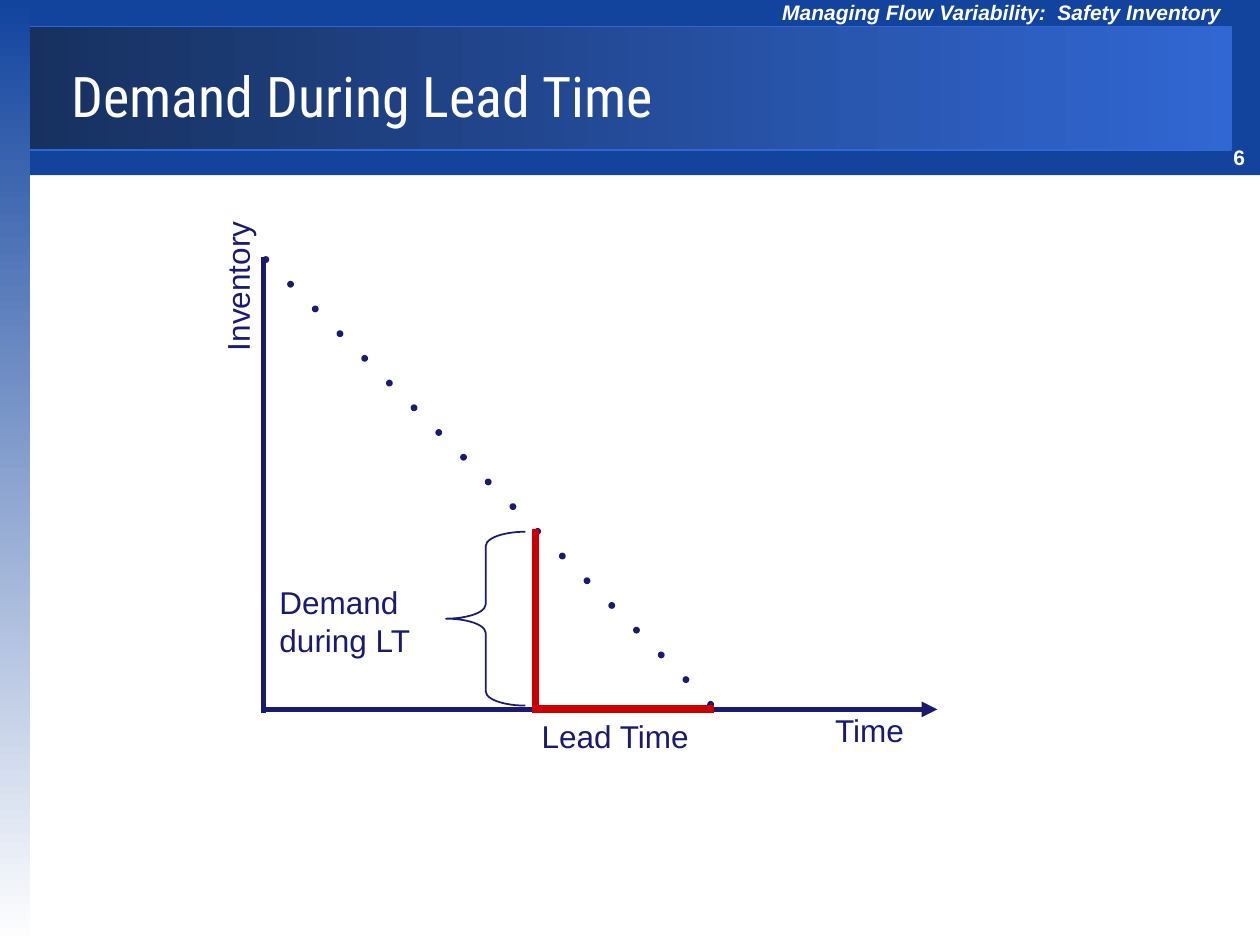
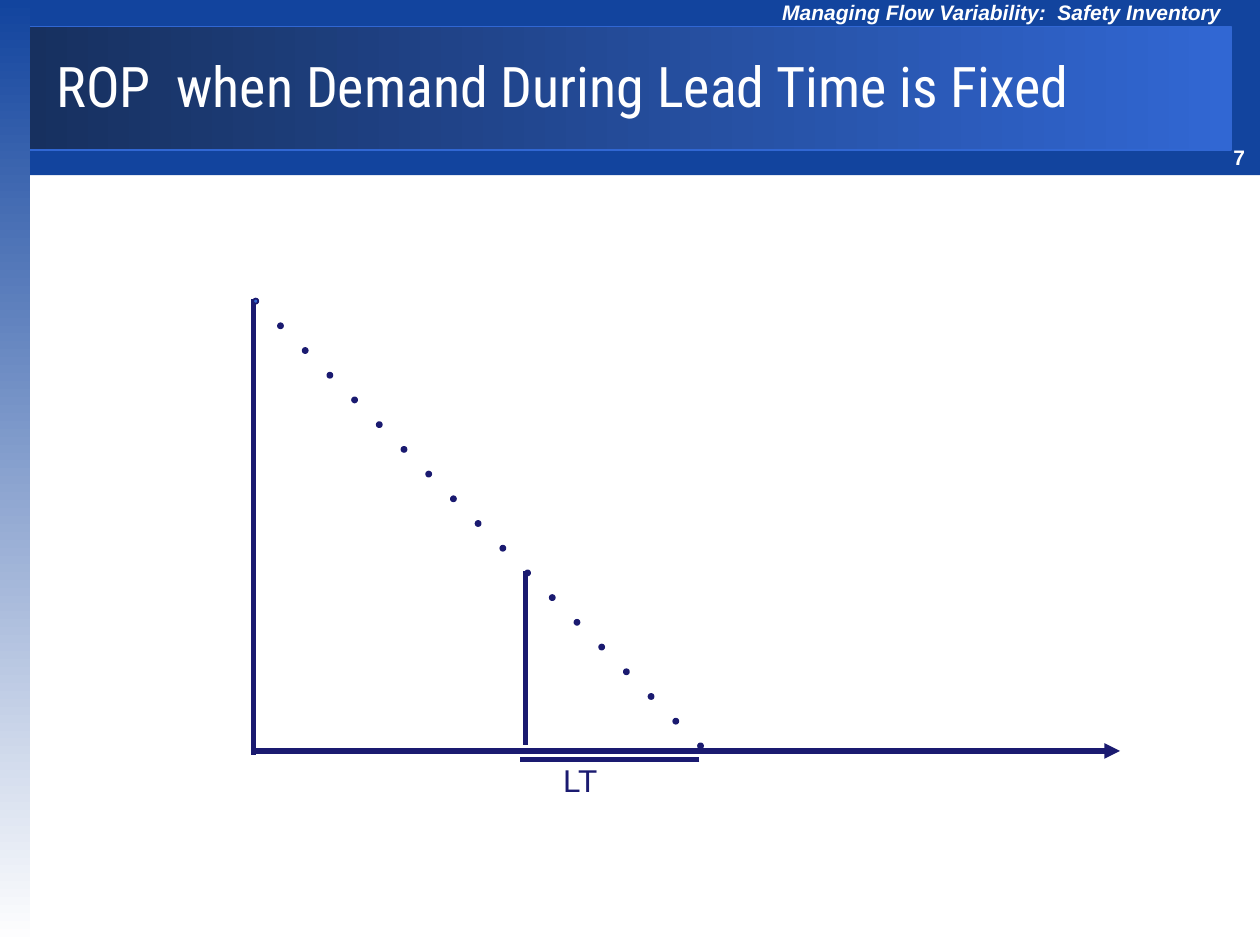
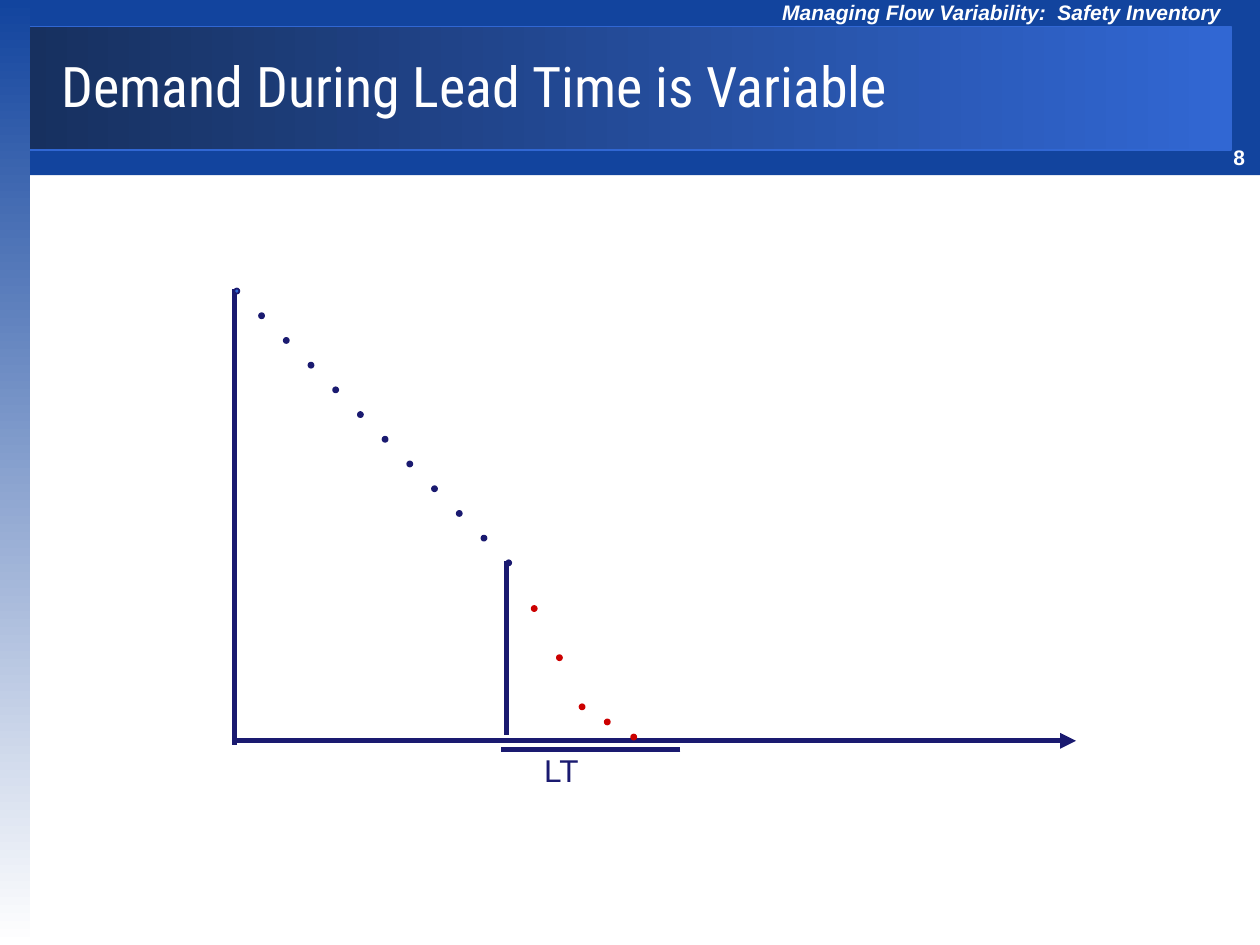
from pptx import Presentation
from pptx.dml.color import RGBColor
from pptx.enum.shapes import MSO_CONNECTOR as Link, MSO_SHAPE as Kind
from pptx.oxml.ns import qn
from pptx.util import Inches, Pt
from lxml.etree import SubElement

NAVY = RGBColor(0x1A, 0x1A, 0x70)
BLUE = RGBColor(0x12, 0x44, 0x9E)
DARK = RGBColor(0x17, 0x30, 0x5F)
SKY = RGBColor(0x31, 0x67, 0xD3)
RED = RGBColor(0xCC, 0x00, 0x00)
WHITE = RGBColor(0xFF, 0xFF, 0xFF)

SIZE = 0.04
COUNT = 19
STEP = 3.53 / (COUNT - 1)
DROP = 3.62
BASE = 3.59
ORDER = 2.16
END = 3.58


def shape(shapes, kind, left, top, width, height, fill=None, line=None, weight=1):
    """Add a preset shape with a plain fill and line."""
    item = shapes.add_shape(kind, Inches(left), Inches(top), Inches(width), Inches(height))
    item.shadow.inherit = False
    if fill is None:
        item.fill.background()
    else:
        item.fill.solid()
        item.fill.fore_color.rgb = fill
    if line is None:
        item.line.fill.background()
    else:
        item.line.color.rgb = line
        item.line.width = Pt(weight)
    return item


def blend(item, start, end, angle):
    """Fill a shape with a gradient of two colours."""
    item.fill.gradient()
    item.fill.gradient_angle = angle
    for stop, color in zip(item.fill.gradient_stops, (start, end)):
        stop.color.rgb = color


def text(shapes, words, left, top, width, height, size=18, color=NAVY,
         face="Arial", bold=False, slant=False, wrap=False):
    """Add a text box of one paragraph."""
    box = shapes.add_textbox(Inches(left), Inches(top), Inches(width), Inches(height))
    box.text_frame.word_wrap = wrap
    para = box.text_frame.paragraphs[0]
    para.text = words
    font = para.font
    font.name, font.size, font.bold, font.italic = face, Pt(size), bold, slant
    font.color.rgb = color
    return box


def line(shapes, x1, y1, x2, y2, color=NAVY, weight=3, arrow=False):
    """Draw a straight line, with an arrowhead at its end if asked."""
    item = shapes.add_connector(Link.STRAIGHT, Inches(x1), Inches(y1), Inches(x2), Inches(y2))
    item.line.color.rgb = color
    item.line.width = Pt(weight)
    if arrow:
        SubElement(item.line._get_or_add_ln(), qn("a:tailEnd"), type="triangle")
    SubElement(item._element.spPr, qn("a:effectLst"))


def frame(deck, page, title, left, top, width):
    """Add a slide with its bands, header, page number and title."""
    shapes = deck.slides.add_slide(deck.slide_layouts[6]).shapes
    shape(shapes, Kind.RECTANGLE, 0.2, 0, 9.8, 1.39, BLUE)
    band = shape(shapes, Kind.RECTANGLE, 0.2, 0.21, 9.57, 0.98, line=SKY, weight=0.75)
    blend(band, DARK, SKY, 0)
    side = shape(shapes, Kind.RECTANGLE, 0, 0, 0.24, 7.5)
    blend(side, BLUE, WHITE, 270)
    text(shapes, str(page), 9.69, 1.1, 0.4, 0.3, 12, WHITE, bold=True)
    text(shapes, "Managing Flow Variability:  Safety Inventory", 6.11, -0.05, 3.89, 0.3,
         12, WHITE, bold=True, slant=True, wrap=True)
    text(shapes, title, left, top, width, 0.63, 32, WHITE, "Roboto Condensed")
    return shapes


def axes(shapes, x, y, width):
    """Draw the time and stock axes from the top of the stock axis."""
    line(shapes, x, y + BASE, x + width, y + BASE, arrow=True)
    line(shapes, x, y + DROP, x, y)


def dot(shapes, x, y, fill=NAVY, edge=NAVY):
    """Add one stock level."""
    shape(shapes, Kind.OVAL, x, y, SIZE, SIZE, fill, edge)


def slope(shapes, x, y, first, last, head=NAVY):
    """Add the steady fall in stock from the first to the last dot."""
    for i in range(first, last):
        dot(shapes, x + i * STEP, y + i * STEP, NAVY if i else head)


def lead(shapes, x, y):
    """Mark the reorder level and the lead time."""
    line(shapes, x + END - 0.04, y + 3.66, x + ORDER - 0.04, y + 3.66)
    line(shapes, x + ORDER, y + ORDER, x + ORDER, y + 3.54)
    text(shapes, "LT", x + 2.36, y + DROP, 0.49, 0.4)


def demand(deck, x, y):
    """Build the slide that names demand during lead time."""
    shapes = frame(deck, 6, "Demand During Lead Time", 0.47, 0.44, 8.94)
    axes(shapes, x, y, 5.35)
    slope(shapes, x, y, 0, COUNT)
    line(shapes, x + END, y + BASE, x + ORDER, y + BASE, RED, 4.5)
    line(shapes, x + ORDER, y + ORDER, x + ORDER, y + DROP, RED, 4.5)
    text(shapes, "Time", x + 4.44, y + 3.55, 0.76, 0.4)
    text(shapes, "Inventory", x - 0.82, y + 0.03, 1.23, 0.4).rotation = 270
    brace = shape(shapes, Kind.LEFT_BRACE, x + 1.45, y + 2.18, 0.63, 1.38, line=NAVY)
    brace.adjustments[0] = 0.18
    text(shapes, "Demand during LT", x + 0.03, y + 2.54, 1.5, 0.7, wrap=True)
    text(shapes, "Lead Time", x + 2.11, y + 3.6, 1.74, 0.4, wrap=True)


def reorder(deck, page, title, left, width, x, y, span, levels=()):
    """Build a reorder slide, with a steady fall or with given late levels."""
    shapes = frame(deck, page, title, left, 0.36, width)
    axes(shapes, x, y, span)
    slope(shapes.add_group_shape().shapes, x, y, 0, 11, SKY)
    slope(shapes, x, y, 11, 12 if levels else COUNT)
    for dx, dy in levels:
        dot(shapes, x + dx, y + dy, RED, RED)
    lead(shapes, x, y)


def main():
    """Build and save the deck."""
    deck = Presentation()
    deck.slide_width, deck.slide_height = Inches(10), Inches(7.5)
    demand(deck, 2.09, 2.04)
    reorder(deck, 7, "ROP  when Demand During Lead Time is Fixed", 0.35, 8.4,
            2.01, 2.37, 6.88)
    reorder(deck, 8, "Demand During Lead Time is Variable", 0.39, 7.02,
            1.86, 2.29, 6.68,
            [(2.36, 2.52), (2.56, 2.91), (2.74, 3.3), (2.94, 3.42), (3.15, 3.54)])
    deck.save("out.pptx")


if __name__ == "__main__":
    main()
